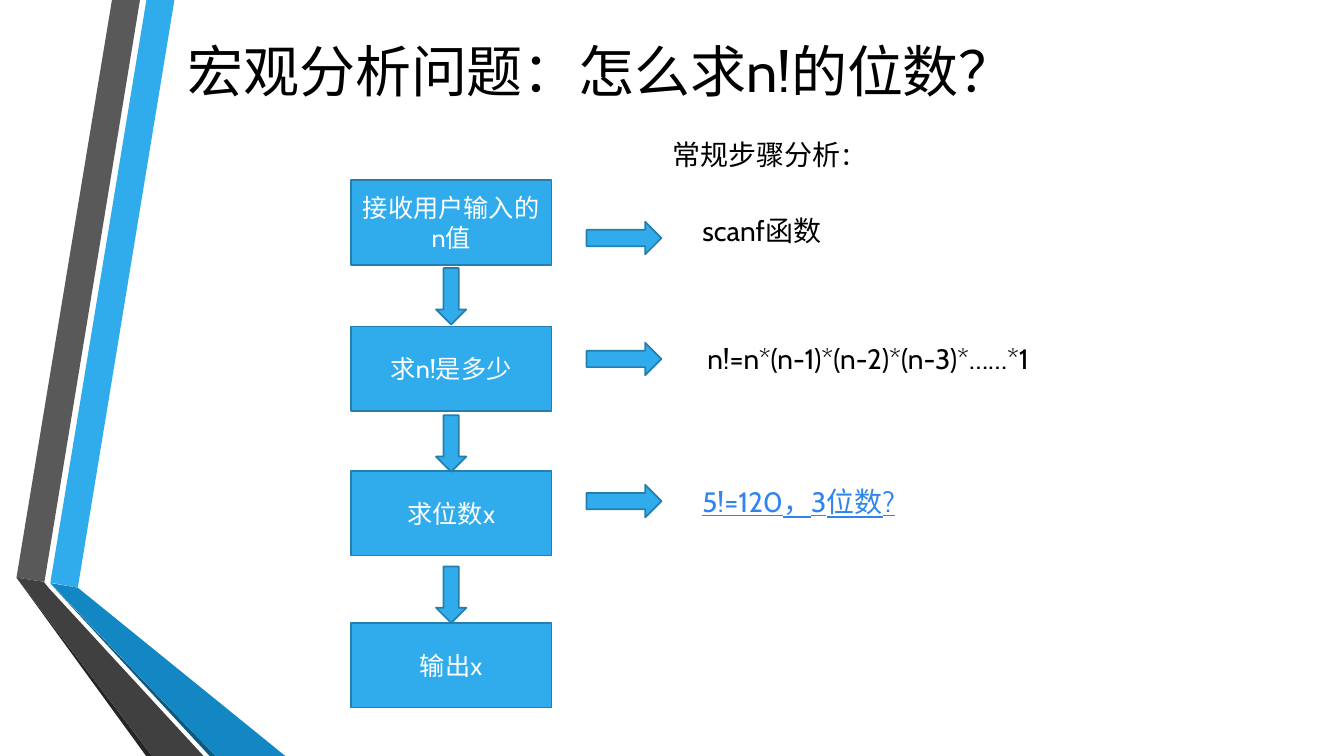
"""Build the flow chart slide on counting the digits of n!."""
from pptx import Presentation
from pptx.dml.color import RGBColor
from pptx.enum.shapes import MSO_SHAPE
from pptx.enum.text import MSO_ANCHOR, PP_ALIGN
from pptx.util import Pt

BLUE, EDGE, BLACK, WHITE, LINK = "30ACEC", "247FAF", "000000", "FFFFFF", "3085ED"


def paint(shape, color, edge=None):
    shape.shadow.inherit = False
    shape.fill.solid()
    shape.fill.fore_color.rgb = RGBColor.from_string(color)
    if edge:
        shape.line.color.rgb = RGBColor.from_string(edge)
        shape.line.width = Pt(1.25)
    else:
        shape.line.fill.background()


def write(shape, runs, color, anchor=MSO_ANCHOR.TOP, align=PP_ALIGN.LEFT, under=None):
    frame = shape.text_frame
    frame.word_wrap = True
    frame.vertical_anchor = anchor
    para = frame.paragraphs[0]
    para.alignment = align
    for text, size in runs:
        run = para.add_run()
        run.text = text
        run.font.name = "Cabin"
        run.font.size = Pt(size)
        run.font.underline = under
        run.font.color.rgb = RGBColor.from_string(color)


deck = Presentation()
deck.slide_width, deck.slide_height = Pt(960), Pt(540)
slide = deck.slides.add_slide(deck.slide_layouts[6])
shapes = slide.shapes

ribbons = [
    (BLUE, [(36, 416.2), (55.6, 419.8), (124.6, 0), (104.6, 0)]),
    ("595959", [(100, 0), (80, 0), (11.8, 412.6), (31.8, 415.6)]),
    ("262626", [(11.8, 412.6), (104.4, 540), (108.7, 540)]),
    ("0C5A82", [(36, 416.9), (149.8, 540), (154.1, 540)]),
    ("1287C3", [(36, 416.5), (154.1, 540), (203.8, 540), (55.6, 419.8)]),
    ("404040", [(145.4, 540), (34.6, 419.8), (31.3, 415.6), (11.8, 412.6), (108.7, 540)]),
]
for color, dots in ribbons:
    dots = [(Pt(x), Pt(y)) for x, y in dots]
    path = shapes.build_freeform(*dots[0], scale=1.0)
    path.add_line_segments(dots[1:], close=True)
    paint(path.convert_to_shape(), color)

title = shapes.add_textbox(Pt(126.7), Pt(15.8), Pt(789), Pt(68.4))
write(title, [("宏观分析问题：怎么求n!的位数？", 40)], BLACK, MSO_ANCHOR.MIDDLE)

steps = [("接收用户输入的n值", 128.8), ("求n!是多少", 233.3), ("求位数x", 336.3), ("输出x", 445)]
for text, top in steps:
    box = shapes.add_shape(MSO_SHAPE.RECTANGLE, Pt(250.6), Pt(top), Pt(143.3), Pt(60.5))
    paint(box, BLUE, EDGE)
    write(box, [(text, 18)], WHITE, MSO_ANCHOR.MIDDLE, PP_ALIGN.CENTER)

for top in (200.9, 306, 414):
    down = shapes.add_shape(MSO_SHAPE.RIGHT_ARROW, Pt(302.1), Pt(top), Pt(40.3), Pt(21.6))
    down.rotation = 90
    paint(down, BLUE, EDGE)

for top in (158.4, 244.8, 346.3):
    arrow = shapes.add_shape(MSO_SHAPE.RIGHT_ARROW, Pt(419), Pt(top), Pt(53.5), Pt(23.3))
    paint(arrow, BLUE, EDGE)

notes = [
    ([("常规步骤分析", 20), ("：", 18)], 473, 95, 308.2, 53.3, BLACK, None),
    ([("scanf函数", 20)], 494.6, 149, 111.6, 31.7, BLACK, None),
    ([("n!=n*(n-1)*(n-2)*(n-3)*……*1", 20)], 498.2, 240.5, 323.3, 31.7, BLACK, None),
    ([("5!=120，3位数?", 20)], 494.6, 342.7, 171.4, 31.7, LINK, True),
]
for runs, left, top, width, height, color, under in notes:
    note = shapes.add_textbox(Pt(left), Pt(top), Pt(width), Pt(height))
    write(note, runs, color, under=under)

deck.save("out.pptx")
